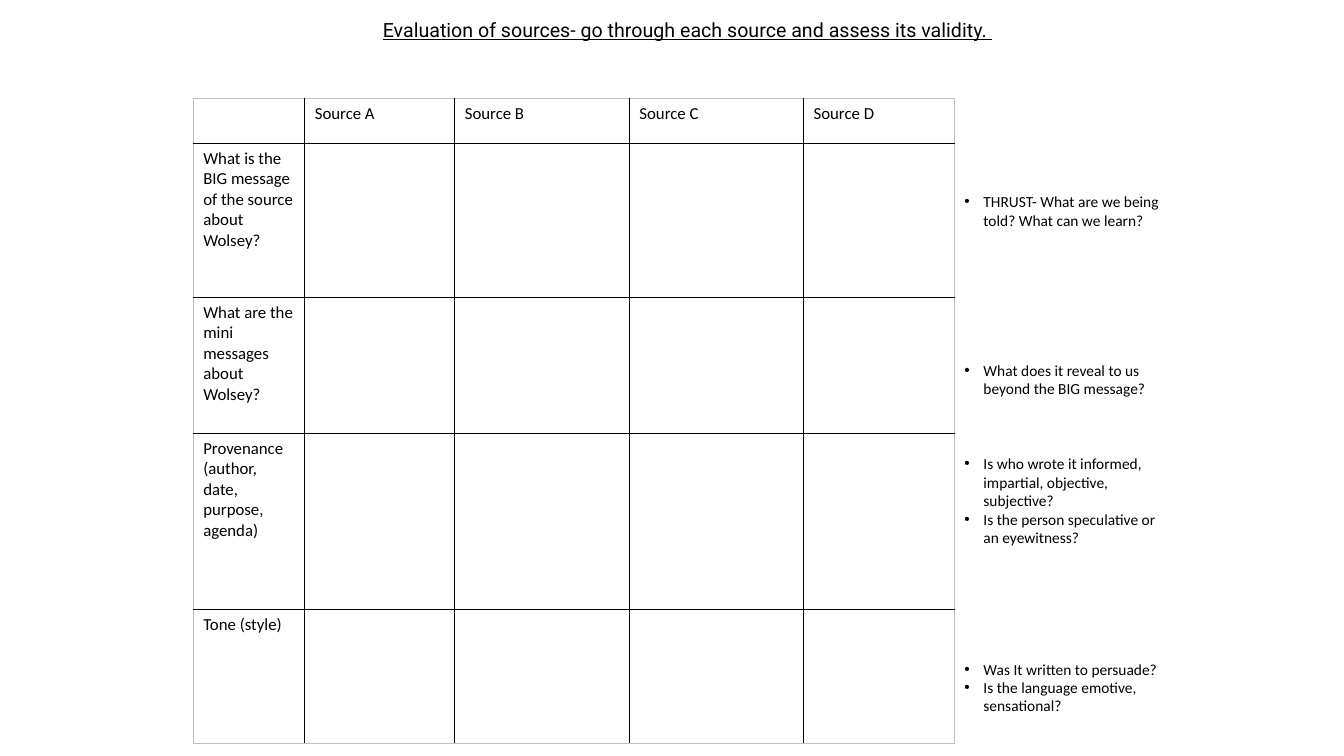
import pptx
import pptx.util
import pptx.dml.color
import pptx.enum.text
from pptx.oxml.xmlchemy import OxmlElement

Cm = pptx.util.Cm
Pt = pptx.util.Pt
ALIGN = pptx.enum.text.PP_ALIGN
BLACK = pptx.dml.color.RGBColor(0x00, 0x00, 0x00)
GREY = pptx.dml.color.RGBColor(0xBF, 0xBF, 0xBF)

TITLE = "Evaluation of sources- go through each source and assess its validity. "
SOURCES = ["Source A", "Source B", "Source C", "Source D"]
QUESTIONS = [
    "What is the BIG message of the source about Wolsey?",
    "What are the mini messages about Wolsey?",
    "Provenance (author, date, purpose, agenda)",
    "Tone (style)",
]
PROMPTS = [
    (0, "THRUST- What are we being told? What can we learn?"),
    (7, "What does it reveal to us beyond the BIG message?"),
    (3, "Is who wrote it informed, impartial, objective, subjective?"),
    (0, "Is the person speculative or an eyewitness?"),
    (6, "Was It written to persuade?"),
    (0, "Is the language emotive, sensational?"),
]

TITLE_BOX = (6.93, 0.33, 20.8, 0.86)
PROMPT_BOX = (24.05, 4.72, 5.64, 14.35)
TABLE_CORNER = (4.87, 2.48)
COLUMN_WIDTHS = [2.81, 3.78, 4.4, 4.39, 3.81]
ROW_HEIGHTS = [1.13, 3.88, 3.43, 4.44, 3.38]
PROMPT_LINE = 13.43
BULLET_INDENT = Cm(0.48)


def write(paragraph, text, size=12, font="Calibri", color=BLACK,
          underline=None, align=ALIGN.LEFT, before=0):
    paragraph.alignment = align
    paragraph.space_before = Pt(before)
    run = paragraph.add_run()
    run.text = text
    run.font.size = Pt(size)
    run.font.name = font
    run.font.color.rgb = color
    run.font.underline = underline


def place(shape, box):
    shape.left, shape.top, shape.width, shape.height = map(Cm, box)
    frame = shape.text_frame
    frame.word_wrap = True
    frame.auto_size = pptx.enum.text.MSO_AUTO_SIZE.NONE
    frame.vertical_anchor = pptx.enum.text.MSO_ANCHOR.TOP
    return frame


def add_bullet(paragraph):
    properties = paragraph._p.get_or_add_pPr()
    properties.set("marL", str(BULLET_INDENT))
    properties.set("indent", str(-BULLET_INDENT))
    for tag, name, value in (("a:buFont", "typeface", "Arial"), ("a:buChar", "char", "•")):
        element = OxmlElement(tag)
        element.set(name, value)
        properties.append(element)


def set_borders(cell, outer_edges):
    properties = cell._tc.get_or_add_tcPr()
    for position, edge in enumerate("LRTB"):
        line = OxmlElement(f"a:ln{edge}")
        line.set("w", str(Pt(1)))
        fill = OxmlElement("a:solidFill")
        color = OxmlElement("a:srgbClr")
        color.set("val", str(GREY if edge in outer_edges else BLACK))
        fill.append(color)
        line.append(fill)
        properties.insert(position, line)


def add_source_table(slide):
    rows = [[""] + SOURCES] + [[question] + [""] * len(SOURCES) for question in QUESTIONS]
    last_row, last_column = len(rows) - 1, len(SOURCES)
    left, top = TABLE_CORNER
    table = slide.shapes.add_table(
        len(rows), last_column + 1, Cm(left), Cm(top),
        Cm(sum(COLUMN_WIDTHS)), Cm(sum(ROW_HEIGHTS))).table
    table.first_row = False
    table.horz_banding = False
    for column, width in zip(table.columns, COLUMN_WIDTHS):
        column.width = Cm(width)
    for row, height in zip(table.rows, ROW_HEIGHTS):
        row.height = Cm(height)
    for row_index, row in enumerate(rows):
        for column_index, text in enumerate(row):
            cell = table.cell(row_index, column_index)
            cell.fill.background()
            at_edge = {"L": column_index == 0, "R": column_index == last_column,
                       "T": row_index == 0, "B": row_index == last_row}
            set_borders(cell, [edge for edge, outer in at_edge.items() if outer])
            if text:
                write(cell.text_frame.paragraphs[0], text)


def main():
    presentation = pptx.Presentation()
    presentation.slide_width = Cm(33.87)
    presentation.slide_height = Cm(19.05)
    slide = presentation.slides.add_slide(presentation.slide_layouts[1])

    add_source_table(slide)

    prompts = place(slide.placeholders[1], PROMPT_BOX)
    for index, (gap_lines, text) in enumerate(PROMPTS):
        paragraph = prompts.add_paragraph() if index else prompts.paragraphs[0]
        write(paragraph, text, size=11, before=gap_lines * PROMPT_LINE)
        add_bullet(paragraph)

    title = place(slide.shapes.title, TITLE_BOX)
    write(title.paragraphs[0], TITLE, size=14, font="Roboto", underline=True, align=ALIGN.CENTER)

    presentation.save("out.pptx")


if __name__ == "__main__":
    main()
